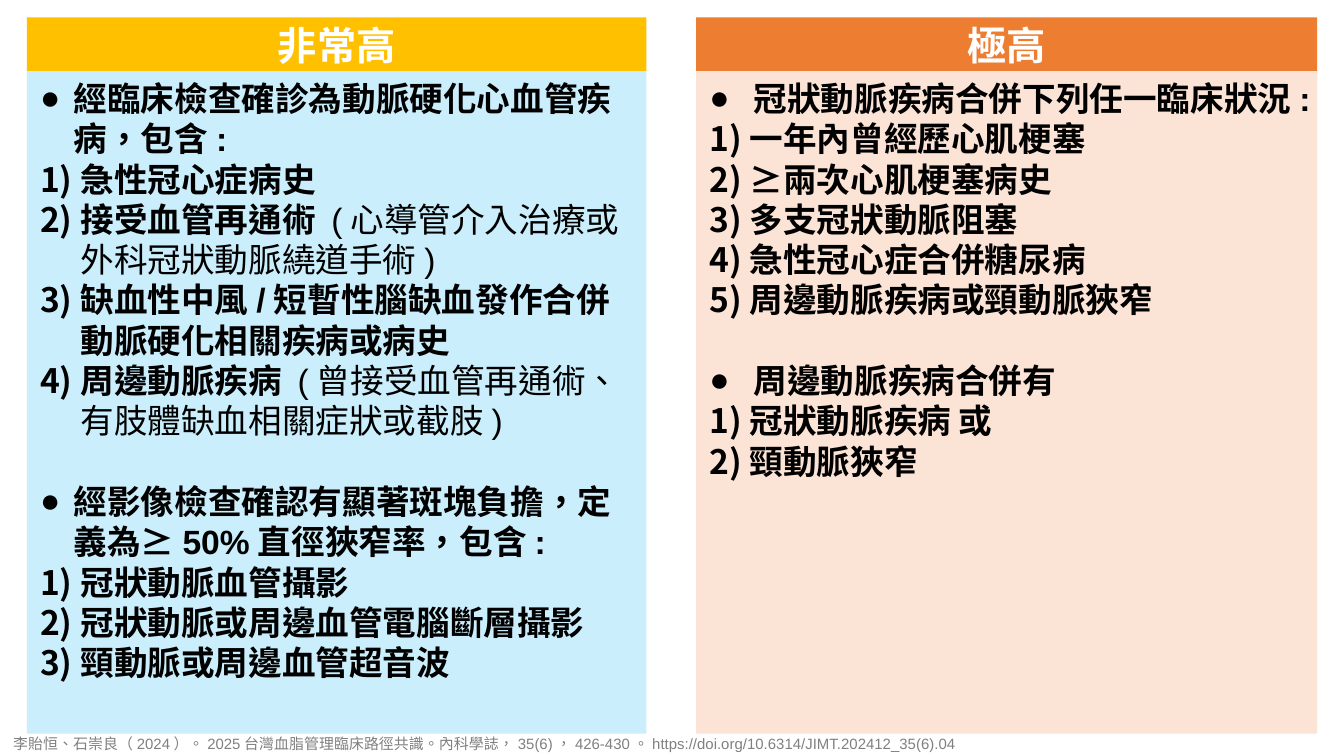
from lxml.etree import SubElement
from pptx import Presentation
from pptx.dml.color import RGBColor
from pptx.enum.lang import MSO_LANGUAGE_ID
from pptx.enum.shapes import MSO_SHAPE
from pptx.enum.text import MSO_ANCHOR, MSO_AUTO_SIZE, PP_ALIGN
from pptx.oxml.ns import qn
from pptx.util import Inches, Pt

HEADER_HEIGHT = 0.4
NUMBER_INDENT = 0.3
GROUP_GAP = 21.6

VERY_HIGH = [
    ("經臨床檢查確診為動脈硬化心血管疾病，包含:", [
        ("急性冠心症病史",),
        ("接受血管再通術 ", "(心導管介入治療或外科冠狀動脈繞道手術)"),
        ("缺血性中風/短暫性腦缺血發作合併動脈硬化相關疾病或病史",),
        ("周邊動脈疾病 ", "(曾接受血管再通術、有肢體缺血相關症狀或截肢)"),
    ]),
    ("經影像檢查確認有顯著斑塊負擔，定義為≥50%直徑狹窄率，包含:", [
        ("冠狀動脈血管攝影",),
        ("冠狀動脈或周邊血管電腦斷層攝影",),
        ("頸動脈或周邊血管超音波",),
    ]),
]
EXTREMELY_HIGH = [
    ("冠狀動脈疾病合併下列任一臨床狀況:", [
        ("一年內曾經歷心肌梗塞",),
        ("≥兩次心肌梗塞病史",),
        ("多支冠狀動脈阻塞",),
        ("急性冠心症合併糖尿病",),
        ("周邊動脈疾病或頸動脈狹窄",),
    ]),
    ("周邊動脈疾病合併有", [
        ("冠狀動脈疾病 或",),
        ("頸動脈狹窄",),
    ]),
]
CITATION = ("李貽恒、石崇良（2024）。2025台灣血脂管理臨床路徑共識。內科學誌，35(6)，426-430。"
            "https://doi.org/10.6314/JIMT.202412_35(6).04")


def color(value):
    """Turn a hex string into a colour."""
    return RGBColor.from_string(value)


def add_panel(group, left, top, width, height, fill):
    """Add a plain filled rectangle to a group."""
    panel = group.shapes.add_shape(
        MSO_SHAPE.RECTANGLE, Inches(left), Inches(top), Inches(width), Inches(height))
    panel.shadow.inherit = False
    panel.fill.solid()
    panel.fill.fore_color.rgb = color(fill)
    panel.line.fill.background()
    panel.text_frame.word_wrap = True
    return panel


def write(para, parts, size, ink, bold=True, align=PP_ALIGN.LEFT):
    """Write the parts in one paragraph; any part after the first is regular."""
    para.alignment = align
    para.font.name = "Arial"
    para.font.size = Pt(size)
    para.font.color.rgb = color(ink)
    if len(parts) == 1:
        para.font.bold = bold
    for index, text in enumerate(parts):
        span = para.add_run()
        span.text = text
        span.font.language_id = MSO_LANGUAGE_ID.TRADITIONAL_CHINESE
        if len(parts) > 1:
            span.font.bold = index == 0


def add_marker(para, indent, tag, **attributes):
    """Give a paragraph a hanging bullet or number."""
    properties = para._p.get_or_add_pPr()
    properties.set("marL", str(Inches(indent)))
    properties.set("indent", str(-Inches(indent)))
    SubElement(properties, qn("a:buFont"), typeface="Arial")
    SubElement(properties, qn(tag), **attributes)


def add_risk_column(page, left, top, width, height, title, groups, bullet_indent, fills):
    """Add a titled column of bulleted criteria with numbered items."""
    column = page.shapes.add_group_shape()
    header = add_panel(column, left, top, width, HEADER_HEIGHT, fills[0])
    header.text_frame.vertical_anchor = MSO_ANCHOR.MIDDLE
    write(header.text_frame.paragraphs[0], [title], 21, "FFFFFF", align=PP_ALIGN.CENTER)

    body = add_panel(column, left, top + HEADER_HEIGHT, width, height - HEADER_HEIGHT, fills[1])
    frame = body.text_frame
    frame.vertical_anchor = MSO_ANCHOR.TOP
    for index, (criterion, items) in enumerate(groups):
        para = frame.add_paragraph() if index else frame.paragraphs[0]
        if index:
            para.space_before = Pt(GROUP_GAP)
        add_marker(para, bullet_indent, "a:buChar", char="●")
        write(para, [criterion], 18, "000000")
        for item in items:
            para = frame.add_paragraph()
            add_marker(para, NUMBER_INDENT, "a:buAutoNum", type="arabicParenR")
            write(para, item, 18, "000000")


def add_citation(page, left, top, width, height):
    """Add the source line at the foot of the page."""
    box = page.shapes.add_textbox(Inches(left), Inches(top), Inches(width), Inches(height))
    box.text_frame.word_wrap = True
    box.text_frame.auto_size = MSO_AUTO_SIZE.SHAPE_TO_FIT_TEXT
    write(box.text_frame.paragraphs[0], [CITATION], 8, "808080", bold=False)


def main():
    """Build the slide and save it."""
    deck = Presentation()
    deck.slide_width = Inches(10)
    deck.slide_height = deck.slide_width * 9 // 16
    page = deck.slides.add_slide(deck.slide_layouts[6])
    add_risk_column(page, 0.2, 0.13, 4.61, 5.33, "非常高", VERY_HIGH, 0.25, ("FFC000", "CAEEFB"))
    add_risk_column(page, 5.18, 0.13, 4.62, 5.33, "極高", EXTREMELY_HIGH, 0.33, ("ED7D31", "FBE3D6"))
    add_citation(page, 0, 5.42, 10, 0.24)
    deck.save("out.pptx")


if __name__ == "__main__":
    main()
